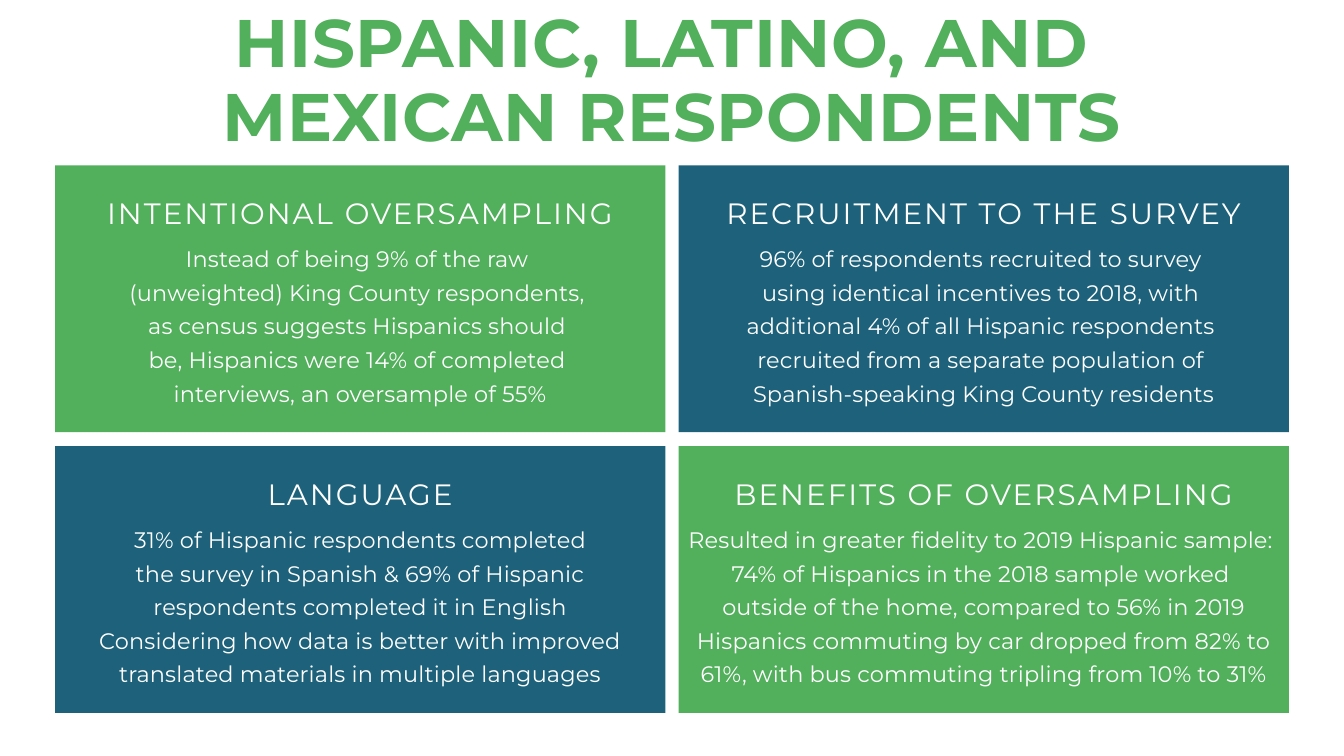
import pptx
import pptx.dml.color
import pptx.enum.shapes
import pptx.enum.text
import pptx.util

PX = 9144  # EMU per px, 100 px to the inch
COLORS = {"green": "52AF5C", "blue": "1D617A", "white": "FFFFFF"}
FONT = "Montserrat"

# Card grid
LEFT, TOP = 82, 246
CARD_WIDTH, CARD_HEIGHT = 908, 397
COLUMN_STEP, ROW_STEP = 928, 418

TITLE = ["HISPANIC, LATINO, AND ", "MEXICAN RESPONDENTS"]
# Row by row: fill, heading, body paragraphs
CARDS = [
    ("green", "INTENTIONAL OVERSAMPLING", [
        "Instead of being 9% of the raw ",
        "(unweighted) King County respondents, ",
        "as census suggests Hispanics should ",
        "be, Hispanics were 14% of completed ",
        "interviews, an oversample of 55%"]),
    ("blue", "RECRUITMENT TO THE SURVEY", [
        "96% of respondents recruited to survey ",
        "using identical incentives to 2018, with ",
        "additional 4% of all Hispanic respondents ",
        "recruited from a separate population of ",
        "Spanish-speaking King County residents"]),
    ("blue", "LANGUAGE", [
        "31% of Hispanic respondents completed",
        "the survey in Spanish & 69% of Hispanic",
        "respondents completed it in English",
        "Considering how data is better with improved "
        "translated materials in multiple languages"]),
    ("green", "BENEFITS OF OVERSAMPLING", [
        "Resulted in greater fidelity to 2019 Hispanic sample: ",
        "74% of Hispanics in the 2018 sample worked ",
        "outside of the home, compared to 56% in 2019",
        "Hispanics commuting by car dropped from 82% to 61%, "
        "with bus commuting tripling from 10% to 31%"]),
]


def rgb(name):
    return pptx.dml.color.RGBColor.from_string(COLORS[name])


def write_text(frame, lines, *, size, leading, tracking, color="white", bold=False):
    """Fill a text frame with one centred paragraph per line; tracking in 1/100 pt."""
    for index, line in enumerate(lines):
        paragraph = frame.add_paragraph() if index else frame.paragraphs[0]
        paragraph.alignment = pptx.enum.text.PP_ALIGN.CENTER
        paragraph.line_spacing = pptx.util.Pt(leading)
        run = paragraph.add_run()
        run.text = line
        run.font.name = FONT
        run.font.size = pptx.util.Pt(size)
        run.font.bold = bold
        run.font.color.rgb = rgb(color)
        run._r.get_or_add_rPr().set("spc", str(tracking))


class SlideBuilder:
    TITLE = dict(size=72, leading=79.2, tracking=70, color="green", bold=True)
    HEADING = dict(size=31.5, leading=44.1, tracking=220)
    BODY = dict(size=24, leading=36, tracking=20)

    def __init__(self, slide):
        self.slide = slide

    def rectangle(self, left, top, width, height, color):
        shape = self.slide.shapes.add_shape(
            pptx.enum.shapes.MSO_SHAPE.RECTANGLE,
            left * PX, top * PX, width * PX, height * PX)
        shape.shadow.inherit = False
        shape.fill.solid()
        shape.fill.fore_color.rgb = rgb(color)
        shape.line.fill.background()

    def text(self, left, top, width, height, lines, style):
        box = self.slide.shapes.add_textbox(
            left * PX, top * PX, width * PX, height * PX)
        frame = box.text_frame
        frame.margin_left = frame.margin_right = 0
        frame.margin_top = frame.margin_bottom = 0
        frame.word_wrap = True
        frame.auto_size = pptx.enum.text.MSO_AUTO_SIZE.SHAPE_TO_FIT_TEXT
        write_text(frame, lines, **style)

    def card(self, left, top, color, heading, body):
        self.rectangle(left, top, CARD_WIDTH, CARD_HEIGHT, color)
        self.text(left, top + 36, CARD_WIDTH, 58, [heading], self.HEADING)
        self.text(left, top + 109, CARD_WIDTH, 246, body, self.BODY)


def main():
    presentation = pptx.Presentation()
    presentation.slide_width = 2000 * PX
    presentation.slide_height = 1125 * PX
    slide = presentation.slides.add_slide(presentation.slide_layouts[6])
    builder = SlideBuilder(slide)

    # Title
    builder.text(112, 10, 1775, 223, TITLE, builder.TITLE)

    # Two by two cards
    for index, (color, heading, body) in enumerate(CARDS):
        row, column = divmod(index, 2)
        builder.card(LEFT + column * COLUMN_STEP, TOP + row * ROW_STEP,
                     color, heading, body)

    presentation.save("out.pptx")


if __name__ == "__main__":
    main()
